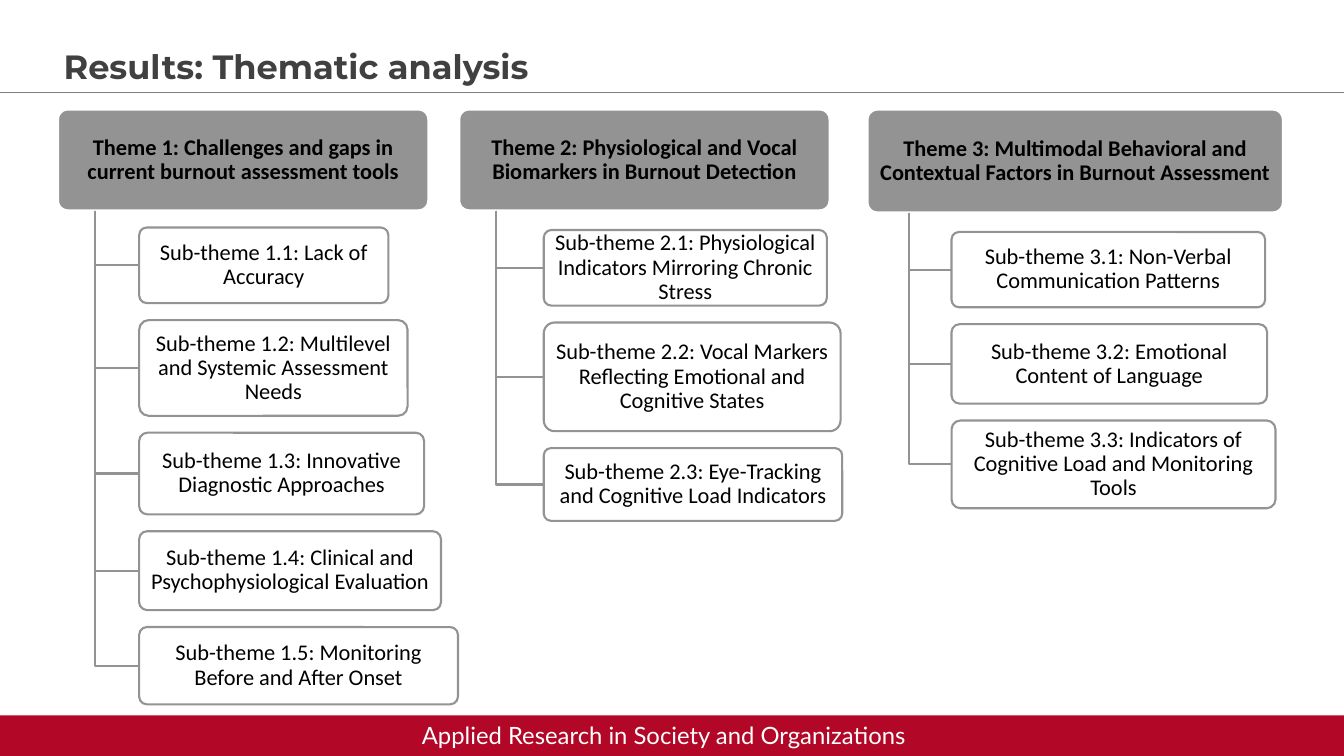
from dataclasses import dataclass

from lxml.etree import SubElement
from pptx import Presentation
from pptx.dml.color import RGBColor
from pptx.enum.shapes import MSO_CONNECTOR, MSO_SHAPE
from pptx.enum.text import MSO_ANCHOR, PP_ALIGN
from pptx.oxml.ns import qn
from pptx.shapes.autoshape import Shape
from pptx.slide import Slide
from pptx.text.text import TextFrame
from pptx.util import Pt

WHITE = RGBColor(0xFF, 0xFF, 0xFF)
BLACK = RGBColor(0x00, 0x00, 0x00)
GRAY = RGBColor(0x93, 0x93, 0x93)
RULE_GRAY = RGBColor(0x80, 0x80, 0x80)
TITLE_GRAY = RGBColor(0x40, 0x40, 0x40)
RED = RGBColor(0xB2, 0x07, 0x26)

THEME_TOP = 78
SUBTHEME_GAP = 12.1
TRUNK_SHARE = 0.1


@dataclass(frozen=True)
class Subtheme:
    text: str
    width: float
    height: float


@dataclass(frozen=True)
class Theme:
    text: str
    left: float
    width: float
    height: float
    subtheme_left: float
    subtheme_top: float
    subthemes: tuple[Subtheme, ...]


THEMES = (
    Theme("Theme 1: Challenges and gaps in current burnout assessment tools",
          41.2, 265, 72.5, 99.4, 162.5, (
              Subtheme("Sub-theme 1.1: Lack of Accuracy", 178, 54),
              Subtheme("Sub-theme 1.2: Multilevel and Systemic Assessment Needs", 191.7, 68.4),
              Subtheme("Sub-theme 1.3: Innovative Diagnostic Approaches", 203.5, 58.3),
              Subtheme("Sub-theme 1.4: Clinical and Psychophysiological Evaluation", 215.6, 56.3),
              Subtheme("Sub-theme 1.5: Monitoring Before and After Onset", 227.7, 55.2),
          )),
    Theme("Theme 2: Physiological and Vocal Biomarkers in Burnout Detection",
          327.8, 265, 72.5, 388.4, 164.3, (
              Subtheme("Sub-theme 2.1: Physiological Indicators Mirroring Chronic Stress", 202.2, 54),
              Subtheme("Sub-theme 2.2: Vocal Markers Reflecting Emotional and Cognitive States", 212, 77.6),
              Subtheme("Sub-theme 2.3: Eye-Tracking and Cognitive Load Indicators", 213.2, 52),
          )),
    Theme("Theme 3: Multimodal Behavioral and Contextual Factors in Burnout Assessment",
          619.4, 297.2, 74, 679.7, 165.7, (
              Subtheme("Sub-theme 3.1: Non-Verbal Communication Patterns", 224, 53.8),
              Subtheme("Sub-theme 3.2: Emotional Content of Language", 225.4, 56.7),
              Subtheme("Sub-theme 3.3: Indicators of Cognitive Load and Monitoring Tools", 231.4, 62.7),
          )),
)


def format_text(text_frame: TextFrame, font_name: str, size: float,
                color: RGBColor, bold: bool = False) -> None:
    for paragraph in text_frame.paragraphs:
        for run in paragraph.runs:
            run.font.name = font_name
            run.font.size = Pt(size)
            run.font.color.rgb = color
            run.font.bold = bold


def add_box(slide: Slide, text: str, left: float, top: float, width: float,
            height: float, fill: RGBColor, line: RGBColor, line_width: float,
            bold: bool = False) -> Shape:
    shape = slide.shapes.add_shape(MSO_SHAPE.ROUNDED_RECTANGLE, Pt(left), Pt(top),
                                   Pt(width), Pt(height))
    shape.adjustments[0] = 0.1
    shape.shadow.inherit = False
    shape.fill.solid()
    shape.fill.fore_color.rgb = fill
    shape.line.color.rgb = line
    shape.line.width = Pt(line_width)
    text_frame = shape.text_frame
    text_frame.text = text
    text_frame.word_wrap = True
    text_frame.vertical_anchor = MSO_ANCHOR.MIDDLE
    text_frame.margin_left = text_frame.margin_right = Pt(2.4)
    text_frame.margin_top = text_frame.margin_bottom = Pt(1.6)
    paragraph = text_frame.paragraphs[0]
    paragraph.alignment = PP_ALIGN.CENTER
    paragraph.line_spacing = 0.9
    format_text(text_frame, "Calibri", 16, BLACK, bold)
    return shape


def add_branch(slide: Slide, trunk: float, top: float, end: float, middle: float) -> None:
    builder = slide.shapes.build_freeform(Pt(trunk), Pt(top))
    builder.add_line_segments([(Pt(trunk), Pt(middle)), (Pt(end), Pt(middle))], close=False)
    branch = builder.convert_to_shape()
    branch.shadow.inherit = False
    branch.fill.background()
    branch.line.color.rgb = GRAY
    branch.line.width = Pt(1.5)


def add_theme(slide: Slide, theme: Theme) -> None:
    add_box(slide, theme.text, theme.left, THEME_TOP, theme.width, theme.height,
            GRAY, WHITE, 2, bold=True)
    trunk = theme.left + TRUNK_SHARE * theme.width
    top = theme.subtheme_top
    for subtheme in theme.subthemes:
        add_branch(slide, trunk, THEME_TOP + theme.height, theme.subtheme_left,
                   top + subtheme.height / 2)
        box = add_box(slide, subtheme.text, theme.subtheme_left, top, subtheme.width,
                      subtheme.height, WHITE, GRAY, 1.5)
        fill_color = box.element.spPr.find(qn("a:solidFill")).find(qn("a:srgbClr"))
        SubElement(fill_color, qn("a:alpha"), val="90000")
        top += subtheme.height + SUBTHEME_GAP


def add_title(slide: Slide) -> None:
    title = slide.shapes.title
    title.left, title.top, title.width, title.height = Pt(38.2), Pt(29.5), Pt(710), Pt(36)
    text_frame = title.text_frame
    text_frame.text = "Results: Thematic analysis"
    text_frame.vertical_anchor = MSO_ANCHOR.TOP
    text_frame.paragraphs[0].alignment = PP_ALIGN.LEFT
    format_text(text_frame, "Montserrat", 24, TITLE_GRAY, bold=True)


def add_rule(slide: Slide) -> None:
    rule = slide.shapes.add_connector(MSO_CONNECTOR.STRAIGHT, Pt(0), Pt(66), Pt(960), Pt(66))
    rule.line.color.rgb = RULE_GRAY
    rule.line.width = Pt(0.25)
    SubElement(rule.element.spPr, qn("a:effectLst"))


def add_footer(slide: Slide) -> None:
    bar = slide.shapes.add_shape(MSO_SHAPE.RECTANGLE, Pt(0), Pt(511), Pt(960), Pt(29))
    bar.shadow.inherit = False
    bar.fill.solid()
    bar.fill.fore_color.rgb = RED
    bar.line.fill.background()
    label = slide.shapes.add_textbox(Pt(294.3), Pt(511), Pt(365), Pt(28))
    label.text_frame.text = "Applied Research in Society and Organizations"
    label.text_frame.word_wrap = True
    format_text(label.text_frame, "Lato", 17, WHITE)


def main() -> None:
    presentation = Presentation()
    presentation.slide_width = Pt(960)
    presentation.slide_height = Pt(540)
    slide = presentation.slides.add_slide(presentation.slide_layouts[5])
    add_rule(slide)
    add_title(slide)
    add_footer(slide)
    for theme in THEMES:
        add_theme(slide, theme)
    presentation.save("out.pptx")


if __name__ == "__main__":
    main()
